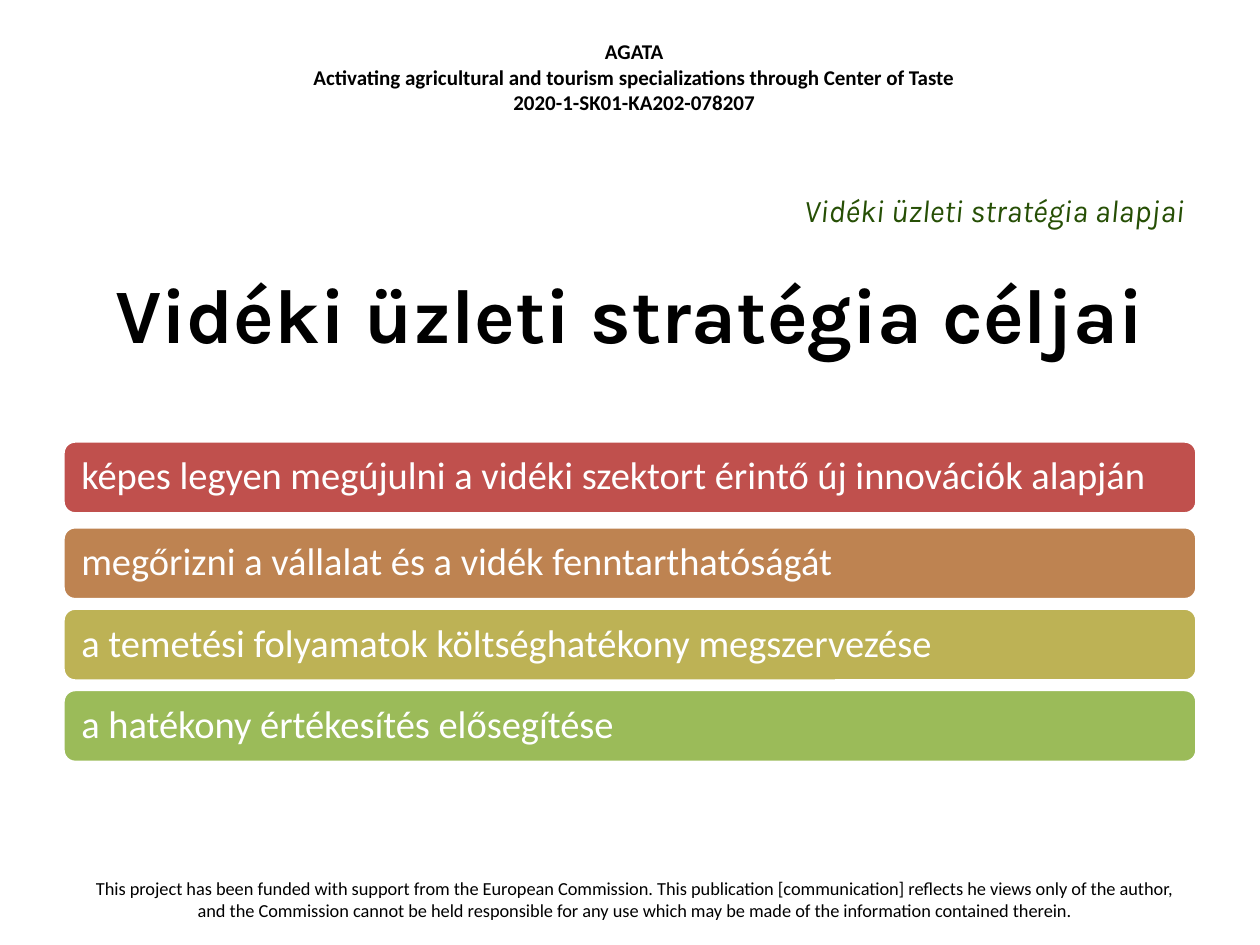
from dataclasses import dataclass

import pptx
import pptx.dml.color
import pptx.enum.shapes
import pptx.enum.text
import pptx.util

Cm = pptx.util.Cm
Align = pptx.enum.text.PP_ALIGN
Anchor = pptx.enum.text.MSO_ANCHOR


@dataclass(frozen=True)
class Theme:
    body_font: str = "Calibri"
    title_font: str = "Karla"
    black: str = "000000"
    white: str = "FFFFFF"
    dark_green: str = "264F05"
    header_size: float = 12
    footer_size: float = 10.5
    title_size: float = 44
    subtitle_size: float = 18
    goal_size: float = 22


@dataclass(frozen=True)
class TextStyle:
    font: str
    size: float
    color: str
    bold: bool = False
    italic: bool = False
    align: Align = Align.CENTER
    anchor: Anchor = Anchor.TOP
    line_spacing: float = 1.0


@dataclass(frozen=True)
class Box:
    left: float
    top: float
    width: float
    height: float

    def lengths(self) -> tuple:
        return Cm(self.left), Cm(self.top), Cm(self.width), Cm(self.height)


@dataclass(frozen=True)
class Goal:
    text: str
    top: float
    fill: str


THEME = Theme()
MARGIN = 1.27
CONTENT_WIDTH = 22.86
BAR_HEIGHT = 1.47
BAR_INSET = 0.3

HEADER_STYLE = TextStyle(THEME.body_font, THEME.header_size, THEME.black, bold=True)
FOOTER_STYLE = TextStyle(THEME.body_font, THEME.footer_size, THEME.black)
TITLE_STYLE = TextStyle(THEME.title_font, THEME.title_size, THEME.black,
                        bold=True, anchor=Anchor.MIDDLE)
SUBTITLE_STYLE = TextStyle(THEME.title_font, THEME.subtitle_size, THEME.dark_green,
                           italic=True, align=Align.RIGHT, anchor=Anchor.MIDDLE)
GOAL_STYLE = TextStyle(THEME.body_font, THEME.goal_size, THEME.white,
                       align=Align.LEFT, anchor=Anchor.MIDDLE, line_spacing=0.9)

HEADER = (
    "AGATA",
    "Activating agricultural and tourism specializations through Center of Taste",
    "2020-1-SK01-KA202-078207",
)
FOOTER = (
    "This project has been funded with support from the European Commission. "
    "This publication [communication] reflects he views only of the author, "
    "and the Commission cannot be held responsible for any use which may be made "
    "of the information contained therein."
)
GOALS = (
    Goal("képes legyen megújulni a vidéki szektort érintő új innovációk alapján", 8.89, "C0504D"),
    Goal("megőrizni a vállalat és a vidék fenntarthatóságát", 10.62, "BE8351"),
    Goal("a temetési folyamatok költséghatékony megszervezése", 12.26, "BDB255"),
    Goal("a hatékony értékesítés elősegítése", 13.9, "9BBB59"),
)


def rgb(value: str) -> pptx.dml.color.RGBColor:
    return pptx.dml.color.RGBColor.from_string(value)


def write_text(shape, lines: tuple[str, ...], style: TextStyle) -> None:
    frame = shape.text_frame
    frame.word_wrap = True
    frame.vertical_anchor = style.anchor
    for index, line in enumerate(lines):
        paragraph = frame.add_paragraph() if index else frame.paragraphs[0]
        paragraph.alignment = style.align
        paragraph.line_spacing = style.line_spacing
        run = paragraph.add_run()
        run.text = line
        run.font.name = style.font
        run.font.size = pptx.util.Pt(style.size)
        run.font.bold = style.bold
        run.font.italic = style.italic
        run.font.color.rgb = rgb(style.color)


def add_text(slide, box: Box, lines: tuple[str, ...], style: TextStyle) -> None:
    write_text(slide.shapes.add_textbox(*box.lengths()), lines, style)


def set_title(slide, box: Box, text: str) -> None:
    title = slide.shapes.title
    title.left, title.top, title.width, title.height = box.lengths()
    write_text(title, (text,), TITLE_STYLE)


def add_goal(slide, goal: Goal) -> None:
    box = Box(MARGIN, goal.top, CONTENT_WIDTH, BAR_HEIGHT)
    shape = slide.shapes.add_shape(
        pptx.enum.shapes.MSO_SHAPE.ROUNDED_RECTANGLE, *box.lengths())
    shape.shadow.inherit = False
    shape.fill.solid()
    shape.fill.fore_color.rgb = rgb(goal.fill)
    shape.line.color.rgb = rgb(THEME.white)
    shape.line.width = pptx.util.Pt(2)
    shape.text_frame.margin_left = shape.text_frame.margin_right = Cm(BAR_INSET)
    write_text(shape, (goal.text,), GOAL_STYLE)


def main() -> None:
    presentation = pptx.Presentation()
    presentation.slide_width = Cm(25.4)
    presentation.slide_height = Cm(19.05)
    slide = presentation.slides.add_slide(presentation.slide_layouts.get_by_name("Title Only"))

    add_text(slide, Box(5.28, 0.66, 15.01, 1.8), HEADER, HEADER_STYLE)
    add_text(slide, Box(1.37, 17.55, CONTENT_WIDTH, 1.19), (FOOTER,), FOOTER_STYLE)
    set_title(slide, Box(MARGIN, 4.72, CONTENT_WIDTH, 3.18), "Vidéki üzleti stratégia céljai")
    for goal in GOALS:
        add_goal(slide, goal)
    add_text(slide, Box(MARGIN, 3.73, CONTENT_WIDTH, 0.99),
             ("Vidéki üzleti stratégia alapjai",), SUBTITLE_STYLE)

    presentation.save("out.pptx")


if __name__ == "__main__":
    main()
